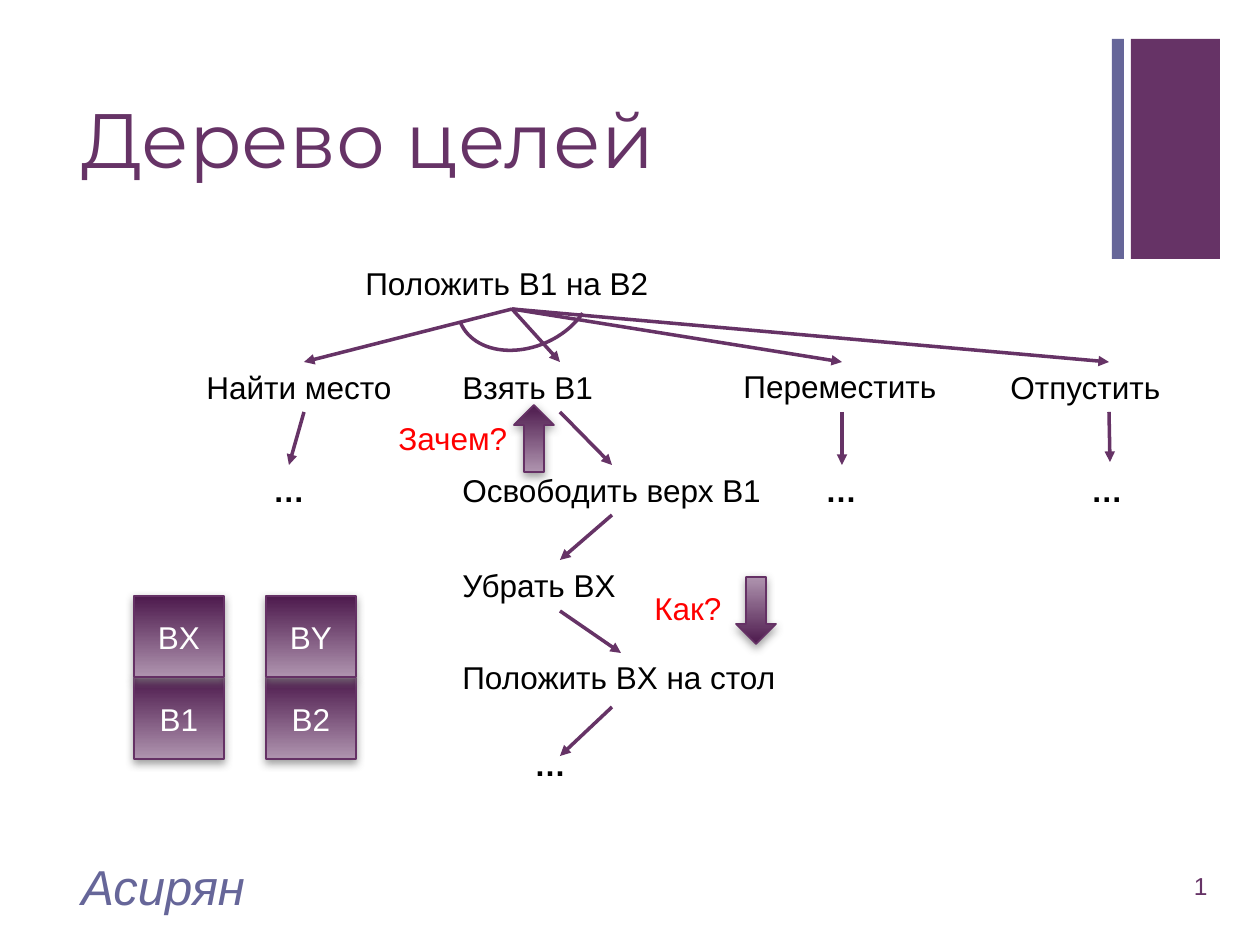
from dataclasses import dataclass

from lxml.etree import SubElement
from pptx import Presentation
from pptx.dml.color import RGBColor
from pptx.enum.shapes import MSO_CONNECTOR as Link, MSO_SHAPE as Preset
from pptx.enum.text import MSO_ANCHOR as Anchor, MSO_AUTO_SIZE as Fit, PP_ALIGN as Align
from pptx.oxml.ns import qn
from pptx.util import Pt

EMU_PER_PX = 914400 / 126


@dataclass(frozen=True)
class Theme:
    plum: str = "663366"
    slate: str = "666699"
    ink: str = "000000"
    question: str = "FF0000"
    on_dark: str = "FFFFFF"
    edge: str = "653165"
    shadow: str = "808080"
    gradient: tuple = ("4D1A4D", "AF94AF")
    body_font: str = "Arial"
    title_font: str = "Montserrat"
    title_size: int = 44
    author_size: int = 28
    body_size: int = 18
    number_size: int = 14


THEME = Theme()

# Rows of the goal tree
ROW_HEIGHT = 50
STEPS, SUBSTEPS, REMOVE, TABLE, DEEPER = 362, 465, 560, 652, 739
COLUMN_WIDTH = 220

GOALS = [  # text, left, top, width
    ("Положить B1 на B2", 353, 258, 318),
    ("Найти место", 194, STEPS, COLUMN_WIDTH),
    ("Взять B1", 450, STEPS, COLUMN_WIDTH),
    ("Переместить", 731, STEPS - 1, COLUMN_WIDTH),
    ("Отпустить", 998, STEPS, COLUMN_WIDTH),
    ("Освободить верх B1", 450, SUBSTEPS, 326),
    ("Убрать BX", 450, REMOVE, COLUMN_WIDTH),
    ("Положить BX на стол", 450, TABLE, 343),
]
OMITTED = [(179, SUBSTEPS), (731, SUBSTEPS), (997, SUBSTEPS), (440, DEEPER)]
QUESTIONS = [("Зачем?", 386, 413, 139), ("Как?", 642, 583, 122)]

ROOT = (512, 309)
STEP_CENTRES = (304, 560, 1109, 842)
BRANCHES = [(ROOT, (centre, STEPS)) for centre in STEP_CENTRES] + [
    ((304, 412), (289, 465)),
    ((560, 412), (612, 465)),
    ((842, 412), (842, 465)),
    ((1109, 412), (1110, 462)),
    ((612, 515), (560, 560)),
    ((560, 611), (621, 653)),
    ((612, 707), (560, 756)),
]
# Each stack runs from the bottom block up
STACKS = [(134, ("B1", "BX")), (266, ("B2", "BY"))]
BLOCK_WIDTH, BLOCK_HEIGHT, BOTTOM_BLOCK_TOP = 90, 81, 678


def px(*lengths):
    return [round(length * EMU_PER_PX) for length in lengths]


def rgb(colour):
    return RGBColor.from_string(colour)


def write(frame, text, size=THEME.body_size, colour=THEME.ink, font=THEME.body_font,
          bold=False, italic=False, align=Align.LEFT, anchor=Anchor.TOP, spacing=None):
    frame.word_wrap = True
    frame.vertical_anchor = anchor
    paragraph = frame.paragraphs[0]
    paragraph.alignment = align
    paragraph.line_spacing = spacing
    run = paragraph.add_run()
    run.text = text
    style = run.font
    style.name, style.size = font, Pt(size)
    style.bold, style.italic = bold, italic
    style.color.rgb = rgb(colour)


def add_label(slide, text, box, grow=False, **look):
    frame = slide.shapes.add_textbox(*px(*box)).text_frame
    write(frame, text, **look)
    if grow:
        frame.auto_size = Fit.SHAPE_TO_FIT_TEXT


def add_bar(slide, box, colour):
    bar = slide.shapes.add_shape(Preset.RECTANGLE, *px(*box))
    bar.shadow.inherit = False
    bar.fill.solid()
    bar.fill.fore_color.rgb = rgb(colour)
    bar.line.fill.background()


def add_shaded(slide, preset, box, rotation=0):
    """Preset shape with a plum gradient and a soft shadow below it."""
    shaded = slide.shapes.add_shape(preset, *px(*box))
    shaded.rotation = rotation
    shaded.fill.gradient()
    shaded.fill.gradient_angle = 270
    for stop, colour in zip(shaded.fill.gradient_stops, THEME.gradient):
        stop.color.rgb = rgb(colour)
    shaded.line.color.rgb = rgb(THEME.edge)
    shaded.line.width = Pt(1)

    shaded.shadow.inherit = False
    effects = shaded._element.spPr.find(qn("a:effectLst"))
    shadow = SubElement(effects, qn("a:outerShdw"), blurRad=str(Pt(5)), dist=str(Pt(2)),
                        dir="5400000", rotWithShape="0")
    tint = SubElement(shadow, qn("a:srgbClr"), val=THEME.shadow)
    SubElement(tint, qn("a:alpha"), val="75000")
    return shaded


def add_branch(slide, start, end):
    branch = slide.shapes.add_connector(Link.STRAIGHT, *px(*start, *end))
    branch.line.color.rgb = rgb(THEME.plum)
    branch.line.width = Pt(2)
    SubElement(branch.line._get_or_add_ln(), qn("a:tailEnd"), type="triangle")
    SubElement(branch._element.spPr, qn("a:effectLst"))


def add_and_arc(slide, box, rotation, start_angle):
    """Arc from start_angle, in degrees, clockwise to zero, before rotation."""
    arc = slide.shapes.add_shape(Preset.ARC, *px(*box))
    arc.rotation = rotation
    # Angles are stored in 1/60000 degree, adjustments in 1/100000
    arc.adjustments[0] = start_angle * 0.6
    arc.adjustments[1] = 0
    arc.shadow.inherit = False
    arc.fill.background()
    arc.line.color.rgb = rgb(THEME.plum)
    arc.line.width = Pt(2)


def add_stack(slide, left, names):
    for level, name in enumerate(names):
        top = BOTTOM_BLOCK_TOP - level * (BLOCK_HEIGHT + 1)
        block = add_shaded(slide, Preset.RECTANGLE, (left, top, BLOCK_WIDTH, BLOCK_HEIGHT))
        write(block.text_frame, name, colour=THEME.on_dark, align=Align.CENTER,
              anchor=Anchor.MIDDLE)


def main():
    deck = Presentation()
    deck.slide_width, deck.slide_height = px(1260, 945)
    slide = deck.slides.add_slide(deck.slide_layouts[6])

    # Corner bars, title and footer
    add_bar(slide, (1131, 39, 89, 220), THEME.plum)
    add_bar(slide, (1112, 39, 12, 220), THEME.slate)
    add_label(slide, "Дерево целей", (69, 67, 1041, 154), size=THEME.title_size,
              colour=THEME.plum, font=THEME.title_font, anchor=Anchor.MIDDLE, spacing=0.9)
    add_label(slide, "1", (1143, 861, 77, 50), size=THEME.number_size,
              colour=THEME.plum, align=Align.RIGHT, anchor=Anchor.MIDDLE)
    add_label(slide, "Асирян", (69, 861, 844, 50), size=THEME.author_size,
              colour=THEME.slate, italic=True, anchor=Anchor.MIDDLE)

    # Goal tree
    for goal, left, top, width in GOALS:
        add_label(slide, goal, (left, top, width, ROW_HEIGHT), grow=True)
    for left, top in OMITTED:
        add_label(slide, "…", (left, top, COLUMN_WIDTH, ROW_HEIGHT), grow=True,
                  bold=True, align=Align.CENTER)
    for start, end in BRANCHES:
        add_branch(slide, start, end)
    add_and_arc(slide, (455, 244, 140, 103), rotation=156.7, start_angle=220.3)

    # Block stacks
    for left, names in STACKS:
        add_stack(slide, left, names)

    # Questions with their reading directions
    for question, left, top, width in QUESTIONS:
        add_label(slide, question, (left, top, width, ROW_HEIGHT), grow=True,
                  colour=THEME.question)
    add_shaded(slide, Preset.UP_ARROW, (514, 405, 40, 67))
    add_shaded(slide, Preset.UP_ARROW, (736, 577, 40, 67), rotation=180)

    deck.save("out.pptx")


if __name__ == "__main__":
    main()
